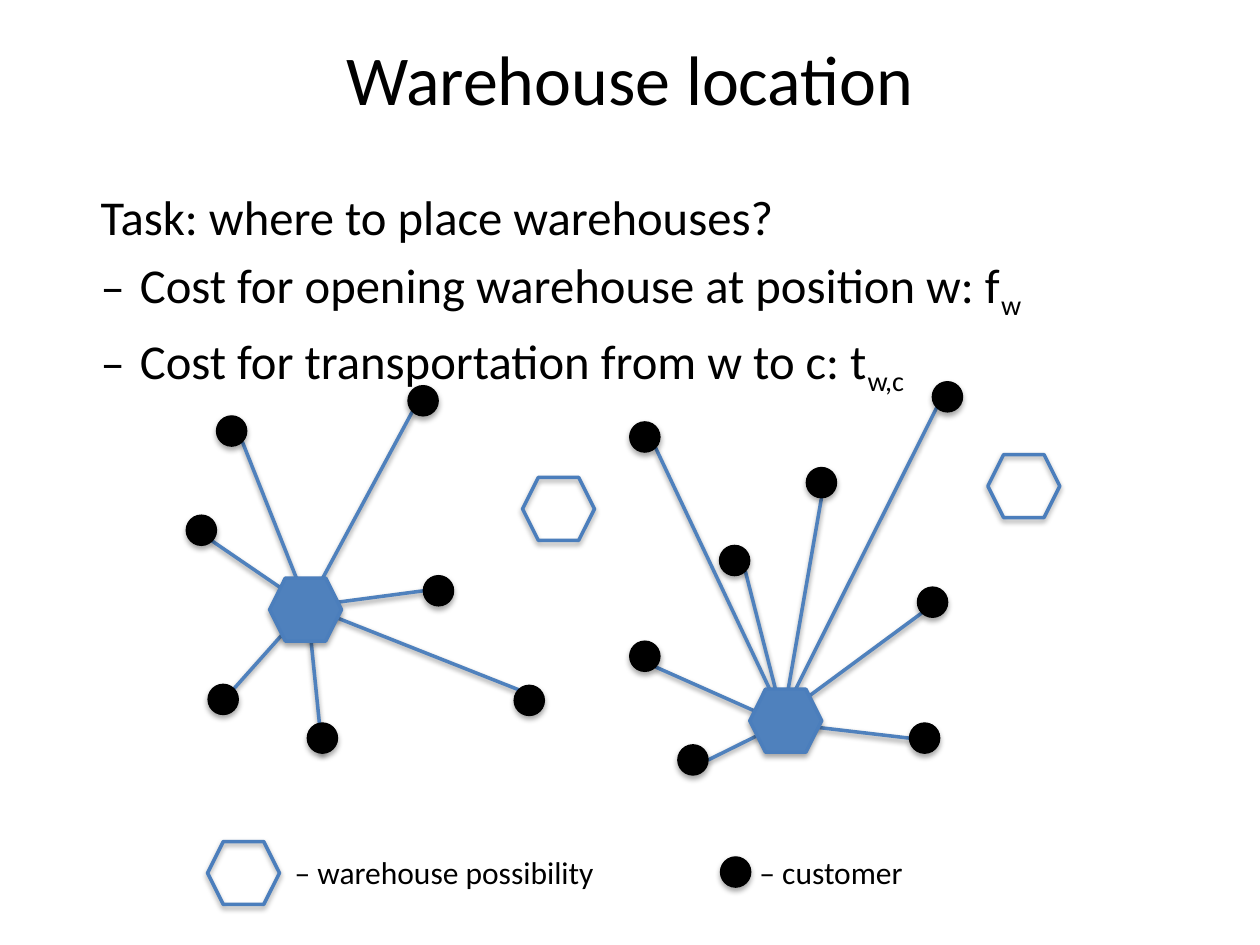
from math import sqrt

from lxml.etree import SubElement
from pptx import Presentation
from pptx.dml.color import RGBColor
from pptx.enum.shapes import MSO_CONNECTOR, MSO_SHAPE
from pptx.enum.text import MSO_ANCHOR, PP_ALIGN
from pptx.oxml.ns import qn
from pptx.util import Cm, Pt

# Content: positions are centres in cm
COLORS = {"blue": "4F81BD", "edge": "4B7EBC", "black": "000000"}
FONT = "Calibri"
TITLE = "Warehouse location"
TASK = [  # text, subscript, bulleted
    ("Task: where to place warehouses?", "", False),
    ("Cost for opening warehouse at position w: f", "w", True),
    ("Cost for transportation from w to c: t", "w,c", True),
]
OPEN = [(6.16, 12.29), (15.84, 14.53)]
UNUSED = [(11.26, 10.26), (20.64, 9.8)]
# Point where the lines meet -> customers and the side each line touches
SPOKES = {
    (6.2, 12.22): [
        (8.84, 11.91, "W"), (4.06, 10.69, "SE"), (4.5, 14.1, "NE"),
        (6.5, 14.88, "S"), (4.67, 8.69, "SE"), (8.53, 8.08, "SW"),
        (10.67, 14.12, "NW"),
    ],
    (15.77, 14.58): [
        (18.64, 14.88, "W"), (13.97, 15.32, "E"), (13, 13.23, "SE"),
        (16.56, 9.73, "S"),
    ],
    (15.77, 14.43): [
        (18.8, 12.14, "SW"), (14.81, 11.3, "SE"), (19.1, 8, "SW"),
        (13, 8.81, "SE"),
    ],
}
LEGEND = [  # symbol, centre, label, label left and width
    ("warehouse", (4.91, 17.6), "– warehouse possibility", 5.69, 7.5),
    ("customer", (14.83, 17.58), "– customer", 15.06, 4.5),
]
HEX_W, HEX_H, DOT = 1.45, 1.27, 0.61

prs = Presentation()
prs.slide_width, prs.slide_height = Cm(25.4), Cm(19.05)
s = prs.slides.add_slide(prs.slide_layouts[6])


def rgb(name):
    return RGBColor.from_string(COLORS[name])


def apply(obj, **values):
    for key, value in values.items():
        setattr(obj, key, value)


def add_shadow(shape, alpha, dist):
    sp_pr = shape._element.spPr
    for old in sp_pr.findall(qn("a:effectLst")):
        sp_pr.remove(old)
    effects = SubElement(sp_pr, qn("a:effectLst"))
    shadow = SubElement(effects, qn("a:outerShdw"), blurRad=str(Pt(3.1)),
                        dist=str(Pt(dist)), dir="5400000", rotWithShape="0")
    color = SubElement(shadow, qn("a:srgbClr"), val=COLORS["black"])
    SubElement(color, qn("a:alpha"), val=str(alpha * 1000))


def add_line(start, end):
    line = s.shapes.add_connector(MSO_CONNECTOR.STRAIGHT,
                                  *(Cm(v) for v in (*start, *end)))
    line.line.color.rgb = rgb("blue")
    line.line.width = Pt(2)
    add_shadow(line, 38, 1.6)


def add_symbol(kind, x, y, w, h, fill, edge, width):
    sp = s.shapes.add_shape(kind, Cm(x - w / 2), Cm(y - h / 2), Cm(w), Cm(h))
    if fill:
        sp.fill.solid()
        sp.fill.fore_color.rgb = rgb(fill)
    else:
        sp.fill.background()
    sp.line.color.rgb = rgb(edge)
    sp.line.width = Pt(width)
    sp.shadow.inherit = False
    add_shadow(sp, 35, 1.8)


def add_warehouse(x, y, fill=None):
    add_symbol(MSO_SHAPE.HEXAGON, x, y, HEX_W, HEX_H, fill, "edge", 2)


def add_customer(x, y):
    add_symbol(MSO_SHAPE.OVAL, x, y, DOT, DOT, "black", "black", 0.75)


def add_box(x, y, w, h, **frame):
    tf = s.shapes.add_textbox(Cm(x), Cm(y), Cm(w), Cm(h)).text_frame
    apply(tf, word_wrap=True, **frame)
    return tf


def add_run(p, text, size):
    r = p.add_run()
    r.text = text
    apply(r.font, name=FONT, size=Pt(size))
    r.font.color.rgb = rgb("black")
    return r


# Lines, under everything else
for meet, customers in SPOKES.items():
    for x, y, side in customers:
        reach = DOT / 2 / sqrt(len(side))
        dx = reach * (("E" in side) - ("W" in side))
        dy = reach * (("S" in side) - ("N" in side))
        add_line(meet, (x + dx, y + dy))

# Title
tf = add_box(1.27, 0.66, 22.86, 1.8, vertical_anchor=MSO_ANCHOR.MIDDLE)
tf.paragraphs[0].alignment = PP_ALIGN.CENTER
add_run(tf.paragraphs[0], TITLE, 40)

# Task
tf = add_box(0.51, 2.46, 24.1, 4.8, margin_top=Cm(1.3))
for i, (text, sub, bulleted) in enumerate(TASK):
    p = tf.add_paragraph() if i else tf.paragraphs[0]
    p.space_before = Pt(5.5 if i else 0)
    hang = Cm(0.79 if bulleted else 0)
    p_pr = p._p.get_or_add_pPr()
    p_pr.set("marL", str(Cm(1.27) + hang))
    p_pr.set("indent", str(-hang))
    if bulleted:
        SubElement(p_pr, qn("a:buFont"), typeface=FONT)
        SubElement(p_pr, qn("a:buChar"), char="–")
    add_run(p, text, 27.8)
    if sub:
        add_run(p, sub, 27.8).font._element.set("baseline", "-25000")

# Warehouses and customers
for x, y in OPEN:
    add_warehouse(x, y, "blue")
for x, y in UNUSED:
    add_warehouse(x, y)
for customers in SPOKES.values():
    for x, y, _ in customers:
        add_customer(x, y)

# Legend
draw = {"warehouse": add_warehouse, "customer": add_customer}
for symbol, centre, label, left, width in LEGEND:
    add_run(add_box(left, 17.07, width, 1.02).paragraphs[0], label, 18)
    draw[symbol](*centre)

prs.save("out.pptx")
